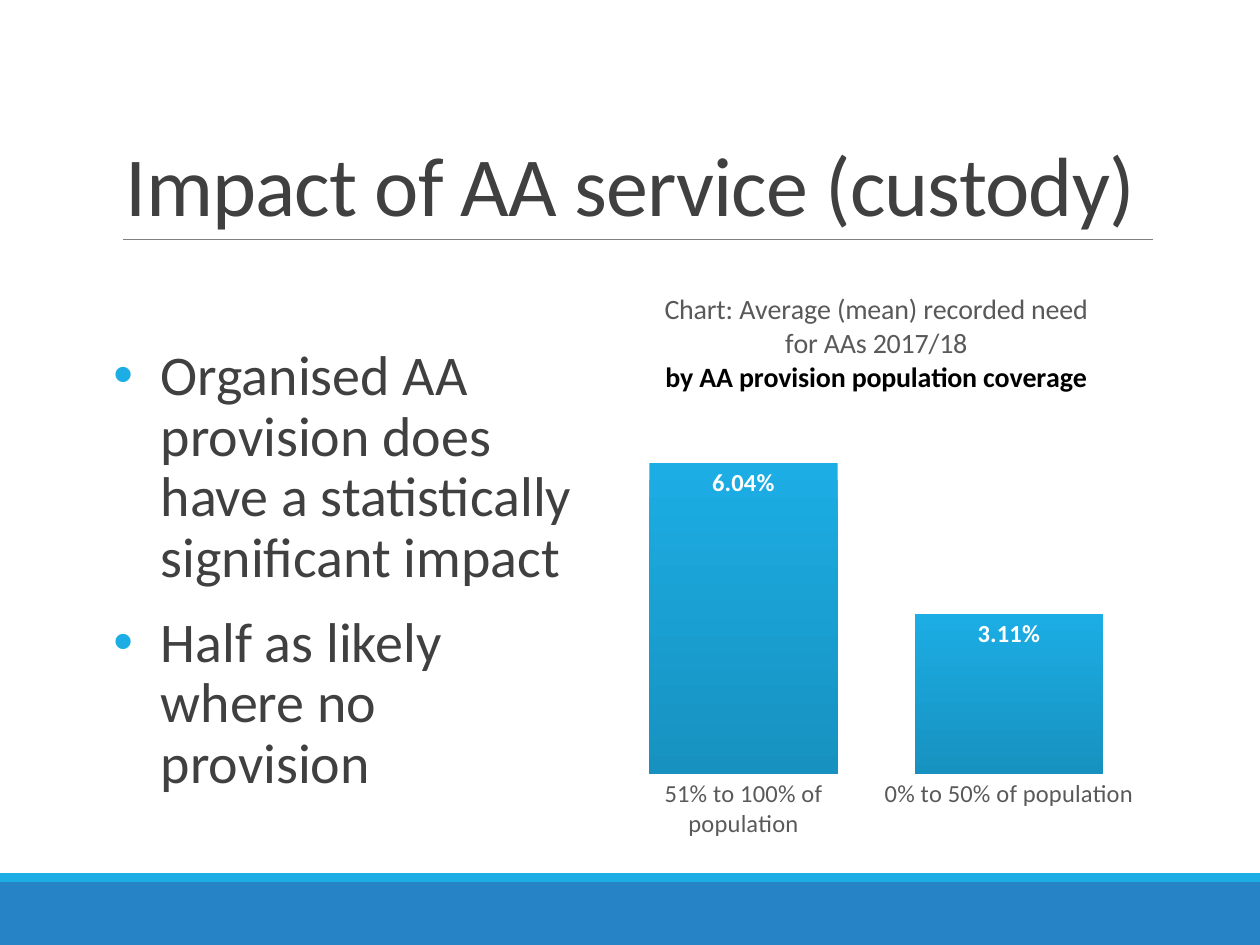
from pptx import Presentation
from pptx.chart.data import CategoryChartData
from pptx.dml.color import RGBColor
from pptx.enum.chart import XL_CHART_TYPE, XL_LABEL_POSITION, XL_TICK_MARK
from pptx.enum.shapes import MSO_CONNECTOR, MSO_SHAPE
from pptx.enum.text import MSO_ANCHOR, PP_ALIGN
from pptx.oxml import parse_xml
from pptx.oxml.ns import nsdecls
from pptx.util import Pt


class Theme:
    face = "Calibri"
    ink, grey, rule = "404040", "595959", "808080"
    sky, deep, blue = "1CADE4", "1792C0", "2683C6"
    white, black = "FFFFFF", "000000"
    head, body, title, label = 48, 32, 16, 14


def put(item, **vals):
    for key, val in vals.items():
        setattr(item, key, val)


def style(font, size, color, bold=False):
    put(font, name=Theme.face, size=Pt(size), bold=bold)
    font.color.rgb = RGBColor.from_string(color)


deck = Presentation()
put(deck, slide_width=Pt(720), slide_height=Pt(540))
slide = deck.slides.add_slide(deck.slide_layouts[6])
shapes = slide.shapes

# Footer bands
for top, high, color in ((504, 36, Theme.blue), (499, 5, Theme.sky)):
    band = shapes.add_shape(MSO_SHAPE.RECTANGLE, 0, Pt(top), Pt(720), Pt(high))
    band.shadow.inherit = False
    band.fill.solid()
    band.fill.fore_color.rgb = RGBColor.from_string(color)
    band.line.fill.background()

# Rule under the heading
rule = shapes.add_connector(MSO_CONNECTOR.STRAIGHT, Pt(70.5), Pt(136.8), Pt(658.8), Pt(136.8))
rule.line.width = Pt(0.5)
rule.line.color.rgb = RGBColor.from_string(Theme.rule)
rule._element.spPr.append(parse_xml(f"<a:effectLst {nsdecls('a')}/>"))

# Heading
head = shapes.add_textbox(Pt(64.8), Pt(22.3), Pt(594), Pt(114.5)).text_frame
put(head, word_wrap=True, vertical_anchor=MSO_ANCHOR.BOTTOM)
para = head.paragraphs[0]
para.line_spacing = 0.85
run = para.add_run()
run.text = "Impact of AA service (custody)"
style(run.font, Theme.head, Theme.ink)
run.font._element.set("spc", "-50")

# Bullets
body = shapes.add_textbox(Pt(64.8), Pt(145.4), Pt(263.5), Pt(316.8)).text_frame
put(body, word_wrap=True, margin_left=0, margin_right=0, margin_top=Pt(53), margin_bottom=Pt(3.6))
points = (
    "Organised AA provision does have a statistically significant impact",
    "Half as likely where no provision",
)
for num, text in enumerate(points):
    para = body.add_paragraph() if num else body.paragraphs[0]
    put(para, line_spacing=0.9, space_before=Pt(12 if num else 0), space_after=Pt(2))
    props = para._p.get_or_add_pPr()
    props.set("marL", str(Pt(27)))
    props.set("indent", str(-Pt(27)))
    props.append(parse_xml(f'<a:buClr {nsdecls("a")}><a:srgbClr val="{Theme.sky}"/></a:buClr>'))
    props.append(parse_xml(f'<a:buFont {nsdecls("a")} typeface="Arial"/>'))
    props.append(parse_xml(f'<a:buChar {nsdecls("a")} char="•"/>'))
    run = para.add_run()
    run.text = text
    style(run.font, Theme.body, Theme.ink)

# Chart
data = CategoryChartData(number_format="0.00%")
data.categories = ["51% to 100% of population", "0% to 50% of population"]
data.add_series("Series 1", (0.0604, 0.0311))
chart = shapes.add_chart(
    XL_CHART_TYPE.COLUMN_CLUSTERED, Pt(342.7), Pt(153.4), Pt(316.1), Pt(331.9), data
).chart
put(chart, has_legend=False, has_title=True)
style(chart.font, Theme.label, Theme.black)
chart._chartSpace.chart.addnext(parse_xml(
    f'<c:spPr {nsdecls("c", "a")}><a:solidFill><a:srgbClr val="{Theme.white}"/></a:solidFill>'
    "<a:ln><a:noFill/></a:ln></c:spPr>"))

# Chart title
frame = chart.chart_title.text_frame
lines = (
    ("Chart: Average (mean) recorded need for AAs 2017/18", Theme.grey, False),
    ("by AA provision population coverage", Theme.black, True),
)
for num, (text, color, bold) in enumerate(lines):
    para = frame.add_paragraph() if num else frame.paragraphs[0]
    para.alignment = PP_ALIGN.CENTER
    run = para.add_run()
    run.text = text
    style(run.font, Theme.title, color, bold)

# Axes and plot area
axis = chart.category_axis
put(axis, major_tick_mark=XL_TICK_MARK.NONE, has_major_gridlines=False)
axis.format.line.fill.background()
style(axis.tick_labels.font, Theme.label, Theme.grey)
put(chart.value_axis, visible=False, has_major_gridlines=False, minimum_scale=0, maximum_scale=0.07)
area = chart._chartSpace.chart.plotArea
for old in area.xpath("c:layout"):
    area.remove(old)
box = "".join(f'<c:{key} val="{val}"/>' for key, val in (
    ("layoutTarget", "inner"), ("xMode", "edge"), ("yMode", "edge"),
    ("x", 0.02), ("y", 0.25), ("w", 0.96), ("h", 0.62)))
area.insert(0, parse_xml(
    f'<c:layout {nsdecls("c")}><c:manualLayout>{box}</c:manualLayout></c:layout>'))

# Columns and labels
plot = chart.plots[0]
put(plot, gap_width=41, vary_by_categories=False, has_data_labels=True)
fill = plot.series[0].format.fill
fill.gradient()
fill.gradient_angle = 270
for stop, color in zip(fill.gradient_stops, (Theme.sky, Theme.deep)):
    stop.color.rgb = RGBColor.from_string(color)
labels = plot.data_labels
put(labels, show_value=True, position=XL_LABEL_POSITION.INSIDE_END,
    number_format="0.00%", number_format_is_linked=False)
style(labels.font, Theme.label, Theme.white, True)

deck.save("out.pptx")
